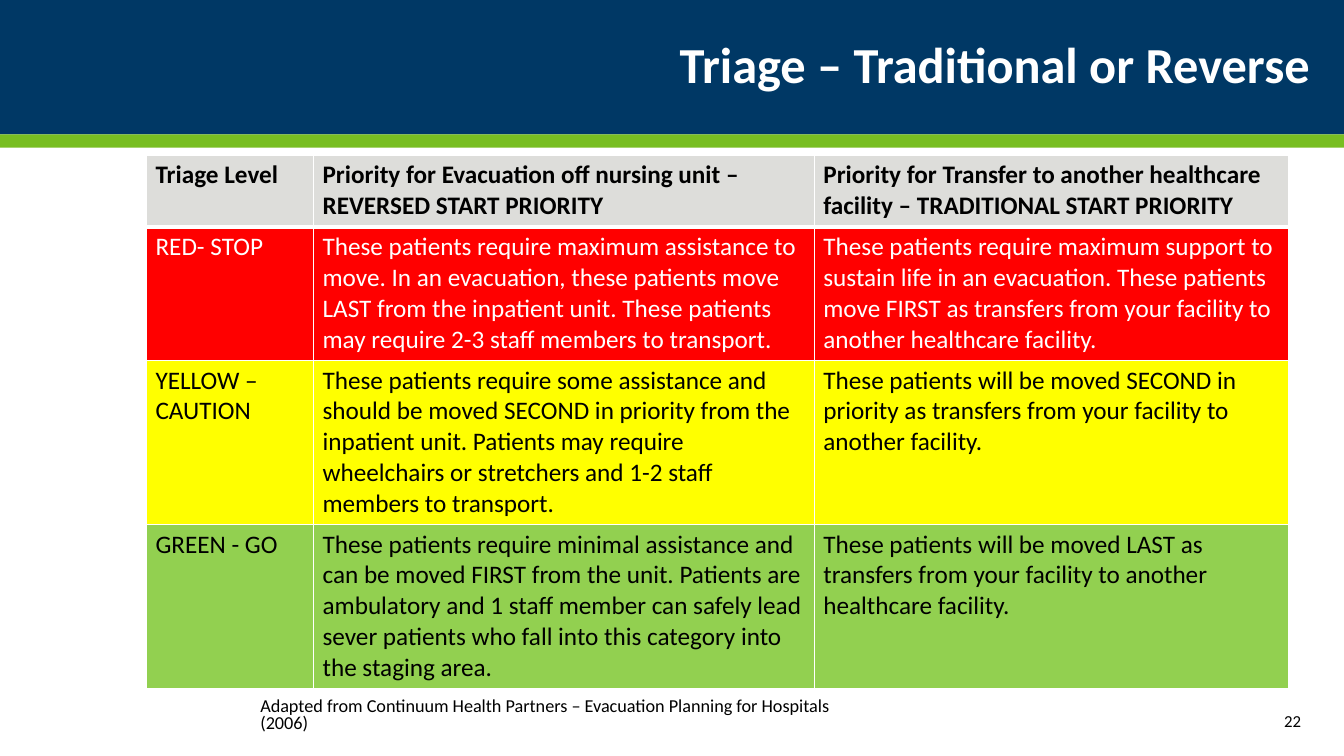
from dataclasses import dataclass

from lxml.etree import SubElement
from pptx import Presentation
from pptx.dml.color import RGBColor
from pptx.enum.shapes import MSO_SHAPE as Preset
from pptx.enum.text import MSO_ANCHOR as Anchor, PP_ALIGN as Align
from pptx.oxml.ns import qn
from pptx.util import Cm, Pt


@dataclass(frozen=True)
class Theme:
    font: str = "Calibri"
    navy: str = "003865"
    lime: str = "78BE21"
    white: str = "FFFFFF"
    black: str = "000000"
    header_grey: str = "DDDDDA"
    red: str = "FF0000"
    yellow: str = "FFFF00"
    green: str = "92D050"
    title_size: int = 36
    table_size: int = 18
    source_size: int = 13
    number_size: int = 12


THEME = Theme()


@dataclass(frozen=True)
class Area:
    """A rectangle on the slide, in centimetres."""
    left: float
    top: float
    width: float
    height: float

    def lengths(self) -> list:
        return [Cm(side) for side in (self.left, self.top, self.width, self.height)]


@dataclass(frozen=True)
class Band:
    area: Area
    color: str


@dataclass(frozen=True)
class Label:
    text: str
    area: Area
    size: int
    color: str = THEME.black
    bold: bool = False
    align: Align = Align.LEFT
    anchor: Anchor = Anchor.MIDDLE
    margins: tuple = (0.25, 0.13, 0.25, 0.13)
    line_spacing: float = 1.0


@dataclass(frozen=True)
class TriageRow:
    cells: tuple
    fill: str
    height: float
    color: str = THEME.black
    bold: bool = False
    bottom_border: int = 1


BANDS = (
    Band(Area(0, 0, 33.87, 3.39), THEME.navy),
    Band(Area(0, 3.39, 33.87, 0.33), THEME.lime),
)

LABELS = (
    Label("Triage – Traditional or Reverse", Area(0, 0, 33.02, 3.39),
          THEME.title_size, THEME.white, bold=True, align=Align.RIGHT,
          margins=(0, 0.13, 0, 0.13), line_spacing=0.9),
    Label("Adapted from Continuum Health Partners – Evacuation Planning for Hospitals (2006)",
          Area(6.05, 17.09, 15.67, 1.96), THEME.source_size, anchor=Anchor.TOP,
          margins=(0.51, 0.51, 0.51, 0.13), line_spacing=0.8),
    Label("22", Area(28.98, 17.65, 4.06, 1.02), THEME.number_size, align=Align.RIGHT),
)

TABLE_LEFT, TABLE_TOP = 3.69, 3.91
COLUMN_WIDTHS = (4.21, 12.62, 11.96)
TRIAGE_ROWS = (
    TriageRow(("Triage Level",
               "Priority for Evacuation off nursing unit – REVERSED START PRIORITY",
               "Priority for Transfer to another healthcare facility – TRADITIONAL START PRIORITY"),
              THEME.header_grey, 1.81, bold=True, bottom_border=3),
    TriageRow(("RED- STOP",
               "These patients require maximum assistance to move. In an evacuation, these patients "
               "move LAST from the inpatient unit. These patients may require 2-3 staff members to "
               "transport.",
               "These patients require maximum support to sustain life in an evacuation. These "
               "patients move FIRST as transfers from your facility to another healthcare facility."),
              THEME.red, 3.36, color=THEME.white),
    TriageRow(("YELLOW – CAUTION",
               "These patients require some assistance and should be moved SECOND in priority from "
               "the inpatient unit. Patients may require wheelchairs or stretchers and 1-2 staff "
               "members to transport.",
               "These patients will be moved SECOND in priority as transfers from your facility to "
               "another facility."),
              THEME.yellow, 4.13),
    TriageRow(("GREEN - GO",
               "These patients require minimal assistance and can be moved FIRST from the unit. "
               "Patients are ambulatory and 1 staff member can safely lead sever patients who fall "
               "into this category into the staging area.",
               "These patients will be moved LAST as transfers from your facility to another "
               "healthcare facility."),
              THEME.green, 4.13),
)


def rgb(color: str) -> RGBColor:
    return RGBColor.from_string(color)


def format_text(frame, size: int, color: str, bold: bool) -> None:
    for para in frame.paragraphs:
        for span in para.runs:
            span.font.name = THEME.font
            span.font.size = Pt(size)
            span.font.bold = bold
            span.font.color.rgb = rgb(color)


def add_band(page, band: Band) -> None:
    shape = page.shapes.add_shape(Preset.RECTANGLE, *band.area.lengths())
    shape.shadow.inherit = False
    shape.fill.solid()
    shape.fill.fore_color.rgb = rgb(band.color)
    shape.line.fill.background()


def add_label(page, label: Label) -> None:
    frame = page.shapes.add_textbox(*label.area.lengths()).text_frame
    frame.word_wrap = True
    frame.vertical_anchor = label.anchor
    (frame.margin_left, frame.margin_top,
     frame.margin_right, frame.margin_bottom) = [Cm(margin) for margin in label.margins]
    frame.text = label.text
    para = frame.paragraphs[0]
    para.alignment = label.align
    para.line_spacing = label.line_spacing
    format_text(frame, label.size, label.color, label.bold)


def set_borders(cell, top: int, bottom: int) -> None:
    """Draw white cell borders, with widths in points; call before filling the cell."""
    properties = cell._tc.get_or_add_tcPr()
    for side, width in (("L", 1), ("R", 1), ("T", top), ("B", bottom)):
        line = SubElement(properties, qn(f"a:ln{side}"), w=str(Pt(width)))
        fill = SubElement(line, qn("a:solidFill"))
        SubElement(fill, qn("a:srgbClr"), val=THEME.white)


def add_triage_table(page) -> None:
    area = Area(TABLE_LEFT, TABLE_TOP, sum(COLUMN_WIDTHS),
                sum(row.height for row in TRIAGE_ROWS))
    table = page.shapes.add_table(len(TRIAGE_ROWS), len(COLUMN_WIDTHS), *area.lengths()).table
    table.horz_banding = False
    for column, width in zip(table.columns, COLUMN_WIDTHS):
        column.width = Cm(width)
    top_border = 1
    for table_row, row in zip(table.rows, TRIAGE_ROWS):
        table_row.height = Cm(row.height)
        for cell, text in zip(table_row.cells, row.cells):
            set_borders(cell, top_border, row.bottom_border)
            cell.fill.solid()
            cell.fill.fore_color.rgb = rgb(row.fill)
            cell.margin_left = cell.margin_right = Cm(0.23)
            cell.margin_top = cell.margin_bottom = Cm(0.12)
            cell.text_frame.text = text
            format_text(cell.text_frame, THEME.table_size, row.color, row.bold)
        top_border = row.bottom_border


def main() -> None:
    deck = Presentation()
    deck.slide_width, deck.slide_height = Cm(33.87), Cm(19.05)
    page = deck.slides.add_slide(deck.slide_layouts[6])
    for band in BANDS:
        add_band(page, band)
    add_triage_table(page)
    for label in LABELS:
        add_label(page, label)
    deck.save("out.pptx")


if __name__ == "__main__":
    main()
